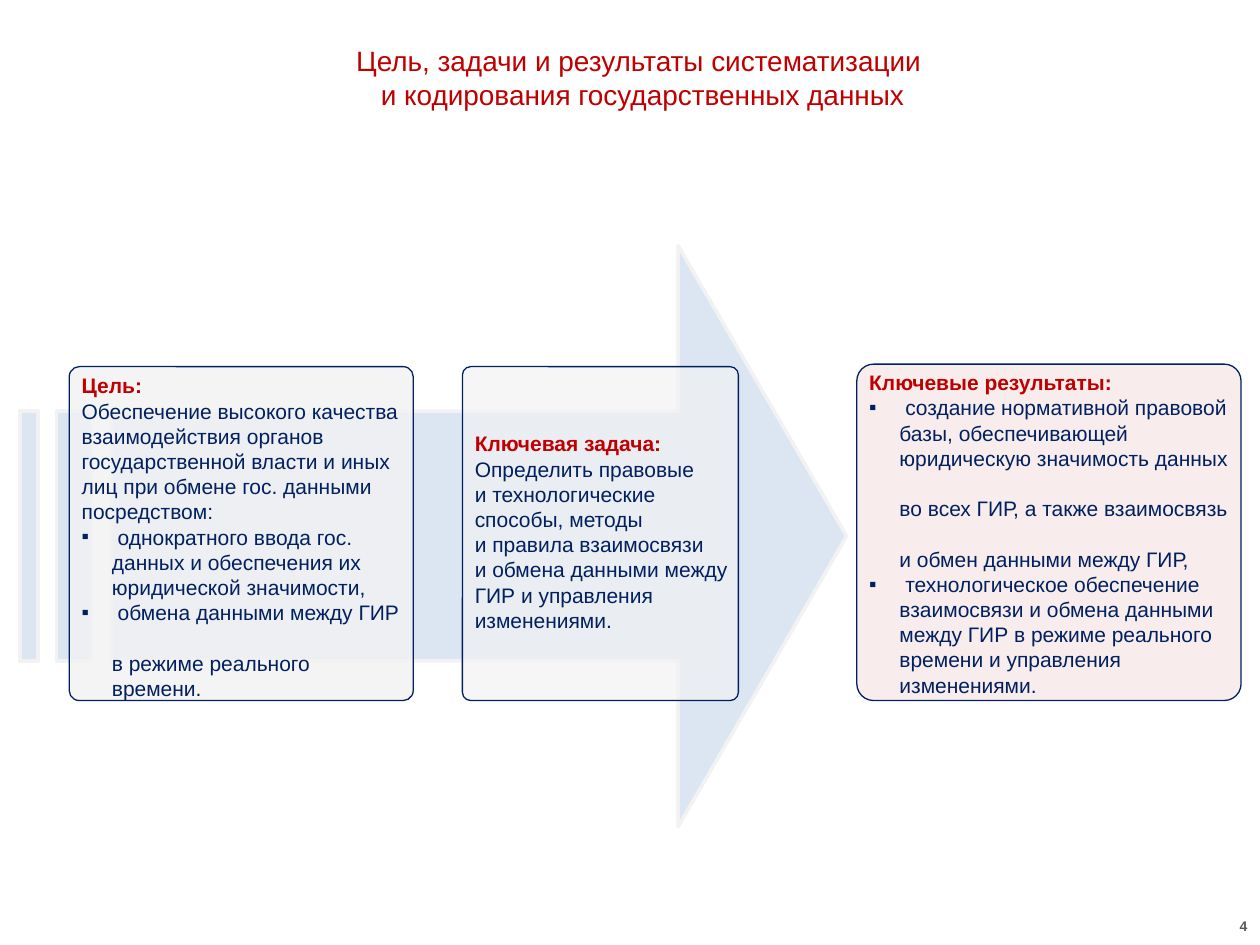
import copy
from dataclasses import dataclass

import pptx
import pptx.dml.color
import pptx.enum.shapes
import pptx.enum.text
import pptx.oxml
import pptx.oxml.ns
import pptx.util

Inches = pptx.util.Inches
Pt = pptx.util.Pt
ALIGN = pptx.enum.text.PP_ALIGN
ANCHOR = pptx.enum.text.MSO_ANCHOR
SHAPE = pptx.enum.shapes.MSO_SHAPE
qn = pptx.oxml.ns.qn


@dataclass(frozen=True)
class Theme:
    font: str = "Arial"
    red: str = "C00000"
    navy: str = "002060"
    grey: str = "595959"
    pale_blue: str = "DCE6F2"
    pale_grey: str = "F2F2F2"
    pale_red: str = "F2DCDB"
    title: int = 16
    body: int = 12
    number: int = 8


THEME = Theme()
HEAD = {"size": THEME.body, "color": THEME.red, "bold": True}
BODY = {"size": THEME.body, "color": THEME.navy, "bold": False}
BULLET_INDENT = 0.24

# Each paragraph: (runs, bulleted, alignment)
GOAL = [
    ([("Цель: \n", HEAD),
      ("Обеспечение высокого качества взаимодействия органов государственной "
       "власти и иных лиц при обмене гос. данными посредством:", BODY)], False, ALIGN.LEFT),
    ([(" однократного ввода гос. данных и обеспечения их юридической значимости,", BODY)],
     True, ALIGN.LEFT),
    ([(" обмена данными между ГИР \nв режиме реального времени.", BODY)], True, ALIGN.LEFT),
]
TASK = [
    ([("Ключевая задача:", HEAD)], False, ALIGN.LEFT),
    ([("Определить правовые \nи технологические способы, методы \nи правила взаимосвязи \n"
       "и обмена данными между ГИР и управления изменениями.", BODY)], False, ALIGN.LEFT),
]
RESULTS = [
    ([("Ключевые результаты: ", HEAD)], False, ALIGN.JUSTIFY),
    ([(" создание нормативной правовой базы, обеспечивающей юридическую значимость данных \n"
       "во всех ГИР, а также взаимосвязь \nи обмен данными между ГИР,", BODY)], True, ALIGN.LEFT),
    ([(" технологическое обеспечение взаимосвязи и обмена данными между ГИР в режиме "
       "реального времени и управления изменениями.", BODY)], True, ALIGN.LEFT),
]


def rgb(value):
    return pptx.dml.color.RGBColor.from_string(value)


def format_run(r, style):
    values = {"name": THEME.font, "size": Pt(style["size"]), "bold": style["bold"]}
    for name, value in values.items():
        setattr(r.font, name, value)
    r.font.color.rgb = rgb(style["color"])


def add_run(p, text, style):
    """Add text, turning each newline into a line break of the same format."""
    for i, line in enumerate(text.split("\n")):
        if i:
            p.add_line_break()
            br = p._p.findall(qn("a:br"))[-1]
            br.append(copy.deepcopy(p.runs[-1]._r.rPr))
        if line:
            r = p.add_run()
            r.text = line
            format_run(r, style)


def add_bullet(p):
    pPr = p._p.get_or_add_pPr()
    indent = Inches(BULLET_INDENT)
    pPr.set("marL", str(indent))
    pPr.set("indent", str(-indent))
    for tag, name, value in (("a:buFont", "typeface", THEME.font), ("a:buChar", "char", "▪")):
        bullet = pptx.oxml.parse_xml(f'<{tag} {pptx.oxml.ns.nsdecls("a")} {name}="{value}"/>')
        pPr.append(bullet)


def add_text(shapes, at, paragraphs, anchor=ANCHOR.TOP, grow=True):
    tf = shapes.add_textbox(*map(Inches, at)).text_frame
    fit = pptx.enum.text.MSO_AUTO_SIZE
    values = {"word_wrap": True, "vertical_anchor": anchor,
              "auto_size": fit.SHAPE_TO_FIT_TEXT if grow else fit.NONE}
    for name, value in values.items():
        setattr(tf, name, value)
    for i, (runs, bulleted, align) in enumerate(paragraphs):
        p = tf.add_paragraph() if i else tf.paragraphs[0]
        p.alignment = align
        if bulleted:
            add_bullet(p)
        for text, style in runs:
            add_run(p, text, style)


def add_outline(shapes, kind, at, adjustments, fill, line, width, opacity=100):
    sp = shapes.add_shape(kind, *map(Inches, at))
    for i, value in enumerate(adjustments):
        sp.adjustments[i] = value
    sp.shadow.inherit = False
    sp.fill.solid()
    sp.fill.fore_color.rgb = rgb(fill)
    sp.line.color.rgb = rgb(line)
    sp.line.width = Pt(width)
    if opacity < 100:
        color = sp._element.spPr.find(qn("a:solidFill")).find(qn("a:srgbClr"))
        color.append(pptx.oxml.parse_xml(
            f'<a:alpha {pptx.oxml.ns.nsdecls("a")} val="{opacity * 1000}"/>'))


def add_card(slide, at, corner, fill, opacity, text_at, paragraphs, anchor=ANCHOR.TOP):
    """Group a rounded panel with the text laid over it."""
    shapes = slide.shapes.add_group_shape().shapes
    add_outline(shapes, SHAPE.ROUNDED_RECTANGLE, at, [corner], fill, THEME.navy, 0.75, opacity)
    add_text(shapes, text_at, paragraphs, anchor)


def main():
    prs = pptx.Presentation()
    prs.slide_width, prs.slide_height = Inches(10), Inches(7.5)
    slide = prs.slides.add_slide(prs.slide_layouts[6])

    add_outline(slide.shapes, SHAPE.STRIPED_RIGHT_ARROW, (0.16, 1.95, 6.56, 4.61),
                (0.43, 0.29), THEME.pale_blue, THEME.pale_grey, 2)
    title = {"size": THEME.title, "color": THEME.red, "bold": False}
    add_text(slide.shapes, (1.48, 0.3, 7.24, 0.64),
             [([("Цель, задачи и результаты систематизации \n"
                 "и кодирования государственных данных", title)], False, ALIGN.CENTER)])

    add_card(slide, (6.8, 2.89, 3.05, 2.67), 0.05, THEME.pale_red, 50,
             (6.8, 2.87, 3.05, 2.73), RESULTS, ANCHOR.MIDDLE)
    add_card(slide, (0.55, 2.91, 2.73, 2.65), 0.03, THEME.pale_grey, 80,
             (0.55, 2.91, 2.73, 2.32), GOAL)
    add_card(slide, (3.67, 2.91, 2.19, 2.65), 0.03, THEME.pale_grey, 66,
             (3.67, 3.37, 2.34, 1.72), TASK)

    number = {"size": THEME.number, "color": THEME.grey, "bold": True}
    add_text(slide.shapes, (7.67, 7.19, 2.33, 0.31),
             [([("4", number)], False, ALIGN.RIGHT)], ANCHOR.MIDDLE, grow=False)
    prs.save("out.pptx")


if __name__ == "__main__":
    main()
